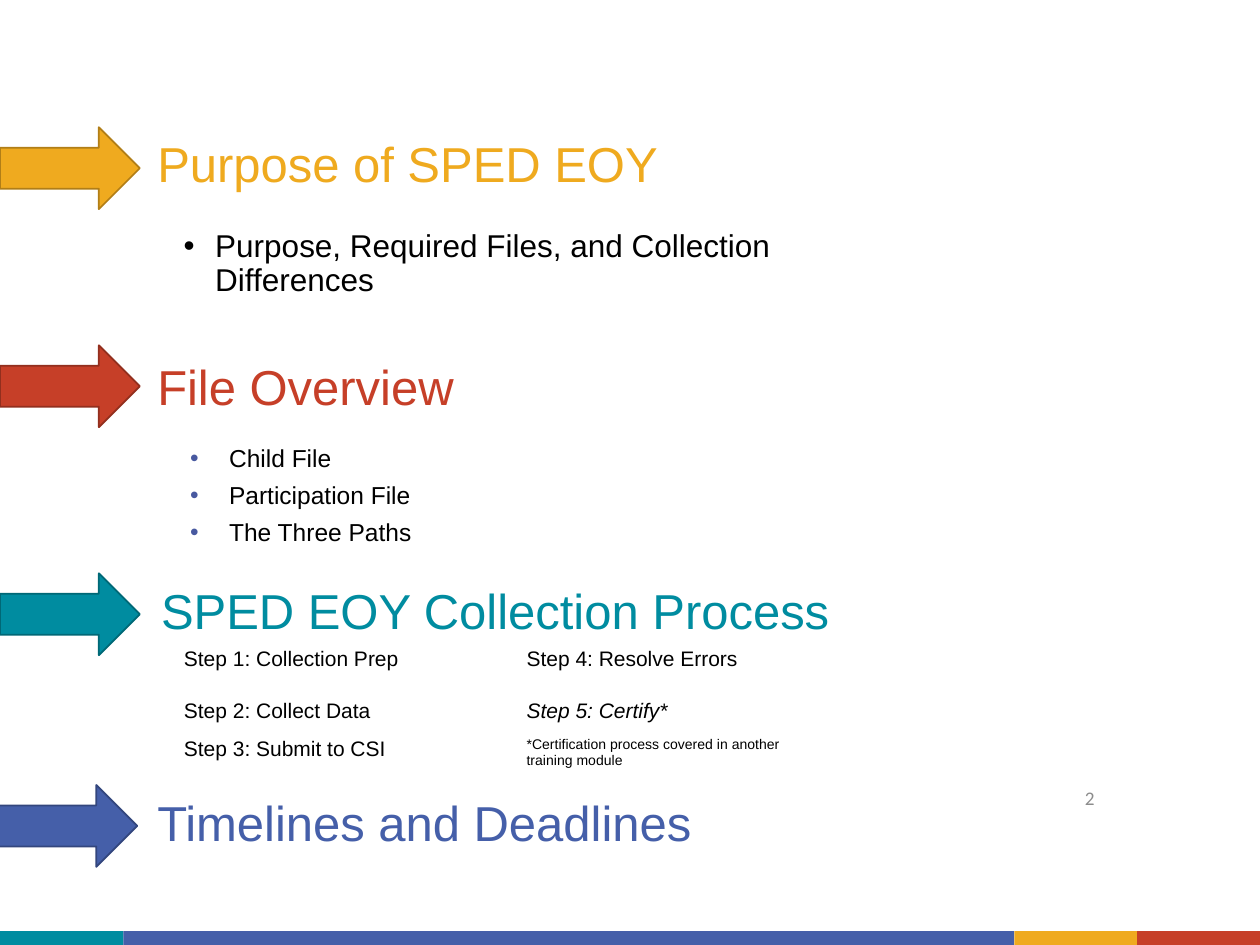
from dataclasses import dataclass

from lxml import etree
from pptx import Presentation
from pptx import util as u
from pptx.dml.color import RGBColor
from pptx.enum import shapes, text
from pptx.oxml.ns import qn

# Grid of 100 columns by 75 rows; every place below is in grid units
CELL = u.Inches(0.1)
COLUMNS, ROWS = 100, 75
COLORS = {
    "gold": "EFAA1F", "gold edge": "B17E17",
    "red": "C63F28", "red edge": "922F1E",
    "teal": "008CA0", "teal edge": "006876",
    "blue": "455FA9", "blue edge": "33467D",
    "bullet": "4859A0", "black": "000000", "gray": "8C8C8C",
}


@dataclass
class Section:
    heading: str
    color: str
    arrow_left: float
    arrow_top: float
    left: float
    top: float


@dataclass
class Bullets:
    lines: list[str]
    place: tuple[float, float, float, float]
    size: int
    indent: tuple[float, float]
    color: str
    before: int = 0
    after: int = 0


SECTIONS = [
    Section("Purpose of SPED EOY", "gold", 0, 10.1, 11.5, 10.6),
    Section("File Overview", "red", 0, 27.4, 11.5, 28.3),
    Section("SPED EOY Collection Process", "teal", 0, 45.5, 11.8, 46.1),
    Section("Timelines and Deadlines", "blue", -0.2, 62.3, 11.5, 62.9),
]
BULLETS = [
    Bullets(["Purpose, Required Files, and Collection Differences"],
            (13.6, 17.8, 55.9, 6.2), 18, (2.5, -2.5), "black"),
    Bullets(["Child File", "Participation File", "The Three Paths"],
            (11.9, 34.9, 40.3, 12.6), 14, (5.3, -3.1), "bullet", 2, 4),
]
STEPS = [
    ("Step 1: Collection Prep", "Step 4: Resolve Errors"),
    ("Step 2: Collect Data", "Step 5: Certify*"),
    ("Step 3: Submit to CSI",
     "*Certification process covered in another training module"),
]
STEP_FORMATS = {(1, 1): {"italic": True}, (2, 1): {"size": 8}}
STEP_COLUMNS, STEP_ROWS = (27.2, 25.4), (4.1, 3, 3.6)
FOOTER = [("teal", 9.8), ("blue", 70.7), ("gold", 9.75), ("red", 9.75)]


def grid(*units: float) -> list[int]:
    return [round(unit * CELL) for unit in units]


def rgb(name: str) -> RGBColor:
    return RGBColor.from_string(COLORS[name])


def write(paragraph, words: str, *, size: float = 12, color: str = "black",
          font: str = "Arial", italic: bool = False, spacing: float = 1.0,
          before: float = 0, after: float = 0) -> None:
    paragraph.line_spacing = spacing
    paragraph.space_before, paragraph.space_after = u.Pt(before), u.Pt(after)
    run = paragraph.add_run()
    run.text = words
    run.font.name, run.font.size, run.font.italic = font, u.Pt(size), italic
    run.font.color.rgb = rgb(color)


def add_frame(slide, *place: float):
    frame = slide.shapes.add_textbox(*grid(*place)).text_frame
    frame.word_wrap = True
    return frame


def add_block(slide, kind, color: str, *place: float):
    block = slide.shapes.add_shape(kind, *grid(*place))
    block.shadow.inherit = False
    block.fill.solid()
    block.fill.fore_color.rgb = rgb(color)
    block.line.fill.background()
    return block


def add_section(slide, section: Section) -> None:
    arrow = add_block(slide, shapes.MSO_SHAPE.RIGHT_ARROW, section.color,
                      section.arrow_left, section.arrow_top, 11.1, 6.5)
    arrow.line.color.rgb = rgb(section.color + " edge")
    arrow.line.width = u.Pt(1)
    frame = add_frame(slide, section.left, section.top, 66, 5.3)
    write(frame.paragraphs[0], section.heading, size=28,
          color=section.color, spacing=0.9)


def set_bullet(paragraph, color: str, indent: tuple[float, float]) -> None:
    props = paragraph._p.get_or_add_pPr()
    margin, first = grid(*indent)
    props.set("marL", str(margin))
    props.set("indent", str(first))
    tint = etree.SubElement(props, qn("a:buClr"))
    etree.SubElement(tint, qn("a:srgbClr"), val=COLORS[color])
    etree.SubElement(props, qn("a:buFont"), typeface="Arial")
    etree.SubElement(props, qn("a:buChar"), char="•")


def add_bullets(slide, bullets: Bullets) -> None:
    frame = add_frame(slide, *bullets.place)
    for index, line in enumerate(bullets.lines):
        paragraph = frame.add_paragraph() if index else frame.paragraphs[0]
        set_bullet(paragraph, bullets.color, bullets.indent)
        write(paragraph, line, size=bullets.size, spacing=0.9,
              before=bullets.before if index else 0, after=bullets.after)


def add_steps(slide) -> None:
    place = grid(13.6, 50.9, sum(STEP_COLUMNS), sum(STEP_ROWS))
    steps = slide.shapes.add_table(len(STEPS), len(STEP_COLUMNS), *place).table
    steps.first_row = steps.horz_banding = False
    for column, width in zip(steps.columns, grid(*STEP_COLUMNS)):
        column.width = width
    for row, height in zip(steps.rows, grid(*STEP_ROWS)):
        row.height = height
    for r, labels in enumerate(STEPS):
        for c, label in enumerate(labels):
            cell = steps.cell(r, c)
            cell.fill.background()
            write(cell.text_frame.paragraphs[0], label,
                  **STEP_FORMATS.get((r, c), {}))


def main() -> None:
    deck = Presentation()
    deck.slide_width, deck.slide_height = COLUMNS * CELL, ROWS * CELL
    slide = deck.slides.add_slide(deck.slide_layouts[6])

    # Footer stripe
    left = 0.0
    for color, width in FOOTER:
        add_block(slide, shapes.MSO_SHAPE.RECTANGLE, color,
                  left, ROWS - 1.1, width, 1.1)
        left += width

    # Agenda sections with their details
    for section in SECTIONS:
        add_section(slide, section)
    for bullets in BULLETS:
        add_bullets(slide, bullets)
    add_steps(slide)

    # Page number
    page = add_frame(slide, 85.4, 61.5, 4.5, 3.7)
    page.margin_left = page.margin_right = u.Inches(0.07)
    page.margin_top = page.margin_bottom = u.Inches(0.07)
    page.vertical_anchor = text.MSO_ANCHOR.MIDDLE
    write(page.paragraphs[0], "2", size=11, color="gray", font="Calibri")

    deck.save("out.pptx")


if __name__ == "__main__":
    main()
